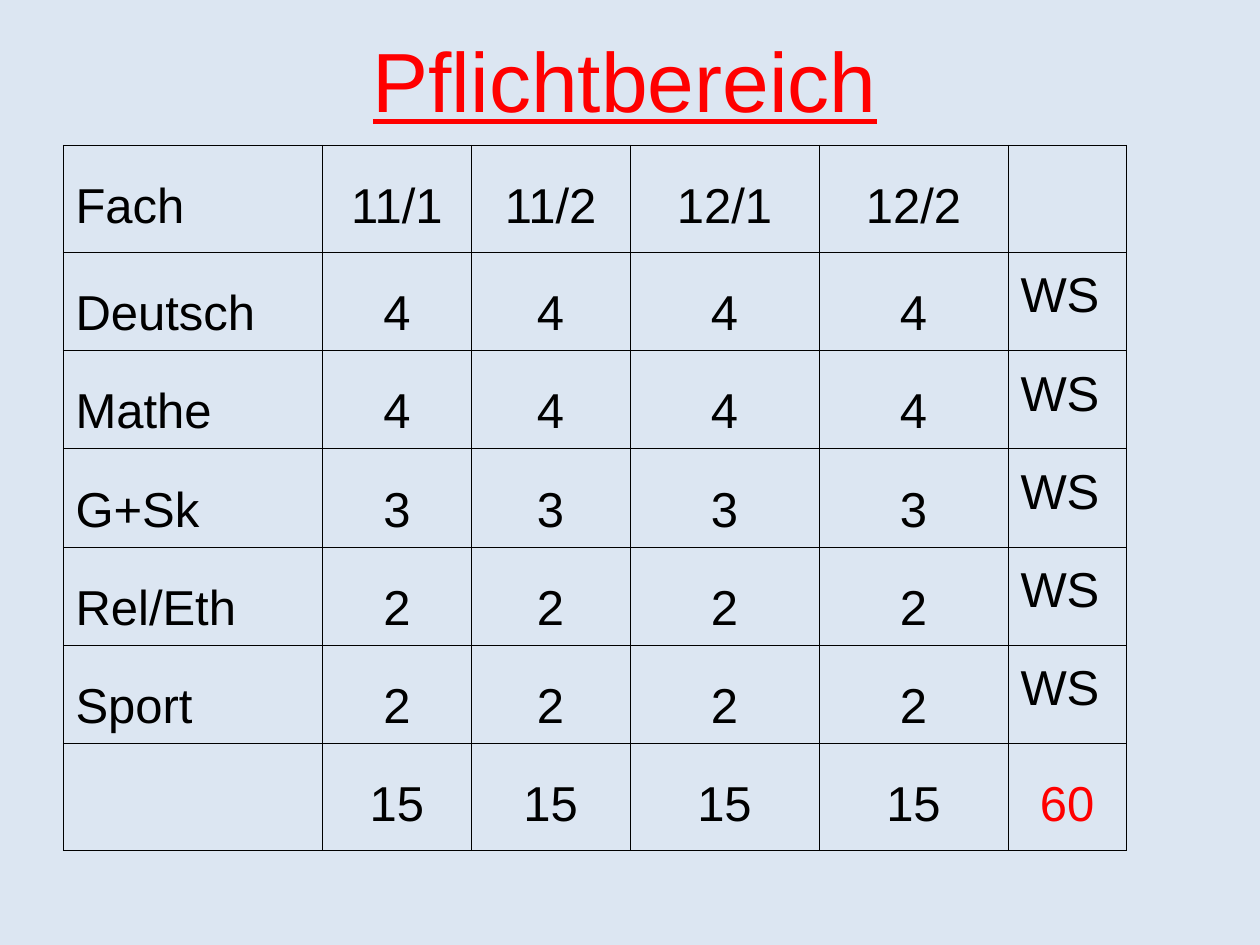
from lxml.etree import SubElement
from pptx import Presentation
from pptx.dml.color import RGBColor
from pptx.enum.text import MSO_ANCHOR, PP_ALIGN
from pptx.oxml.ns import qn
from pptx.util import Inches, Pt

# Content
TITLE = "Pflichtbereich"
TERMS = ["11/1", "11/2", "12/1", "12/2"]
SUBJECTS = [("Deutsch", 4), ("Mathe", 4), ("G+Sk", 3), ("Rel/Eth", 2), ("Sport", 2)]
UNIT = "WS"

TERM_SUM = sum(hours for _, hours in SUBJECTS)
TOTAL = str(TERM_SUM * len(TERMS))
ROWS = [
    ["Fach", *TERMS, ""],
    *[[name, *[str(hours)] * len(TERMS), UNIT] for name, hours in SUBJECTS],
    ["", *[str(TERM_SUM)] * len(TERMS), TOTAL],
]

# Look
FONT = "Arial"
BACKGROUND = RGBColor(0xDC, 0xE6, 0xF2)
RED = RGBColor(0xFF, 0x00, 0x00)
BLACK = RGBColor(0x00, 0x00, 0x00)
COLUMN_WIDTHS = [2.06, 1.18, 1.26, 1.5, 1.5, 0.94]
ROW_HEIGHTS = [0.85, *[0.78] * len(SUBJECTS), 0.85]
INNER_LINE, OUTER_LINE = 0.06, 0.11


def add_text(para, text, size, color, underline=None):
    span = para.add_run()
    span.text = text
    font = span.font
    font.name, font.size, font.underline = FONT, Pt(size), underline
    font.color.rgb = color


def add_borders(cell, outer_sides):
    properties = cell._tc.get_or_add_tcPr()
    for position, side in enumerate("LRTB"):
        width = OUTER_LINE if side in outer_sides else INNER_LINE
        line = properties.makeelement(qn(f"a:ln{side}"), {"w": str(Pt(width))})
        properties.insert(position, line)  # borders come before the fill
        fill = SubElement(line, qn("a:solidFill"))
        SubElement(fill, qn("a:srgbClr"), val=str(BLACK))


def fill_cell(cell, text, column):
    is_unit = text == UNIT
    cell.fill.background()
    cell.margin_left = cell.margin_right = Inches(0.1)
    cell.margin_top = Inches(0.22 if is_unit else 0.36)
    cell.margin_bottom = Inches(0.05)
    if not text:
        return
    para = cell.text_frame.paragraphs[0]
    para.alignment = PP_ALIGN.LEFT if column == 0 or is_unit else PP_ALIGN.CENTER
    para.line_spacing = 0.76
    para.space_before = Pt(5 if is_unit else 9)
    add_text(para, text, 28, RED if text == TOTAL else BLACK)


deck = Presentation()
deck.slide_width, deck.slide_height = Inches(10), Inches(7.5)
page = deck.slides.add_slide(deck.slide_layouts[6])
page.background.fill.solid()
page.background.fill.fore_color.rgb = BACKGROUND

# Title
box = page.shapes.add_textbox(Inches(0.46), Inches(0), Inches(9), Inches(1.25))
frame = box.text_frame
frame.word_wrap = True
frame.vertical_anchor = MSO_ANCHOR.MIDDLE
frame.paragraphs[0].alignment = PP_ALIGN.CENTER
add_text(frame.paragraphs[0], TITLE, 48, RED, underline=True)

# Table of weekly hours
table = page.shapes.add_table(
    len(ROWS), len(COLUMN_WIDTHS), Inches(0.5), Inches(1.15),
    Inches(sum(COLUMN_WIDTHS)), Inches(sum(ROW_HEIGHTS)),
).table
table.first_row = table.horz_banding = False
for column, width in zip(table.columns, COLUMN_WIDTHS):
    column.width = Inches(width)
for row, height in zip(table.rows, ROW_HEIGHTS):
    row.height = Inches(height)

last_row, last_column = len(ROWS) - 1, len(COLUMN_WIDTHS) - 1
for r, texts in enumerate(ROWS):
    for c, text in enumerate(texts):
        cell = table.cell(r, c)
        fill_cell(cell, text, c)
        edges = {"L": c == 0, "R": c == last_column, "T": r == 0, "B": r == last_row}
        add_borders(cell, [side for side, outer in edges.items() if outer])

deck.save("out.pptx")
